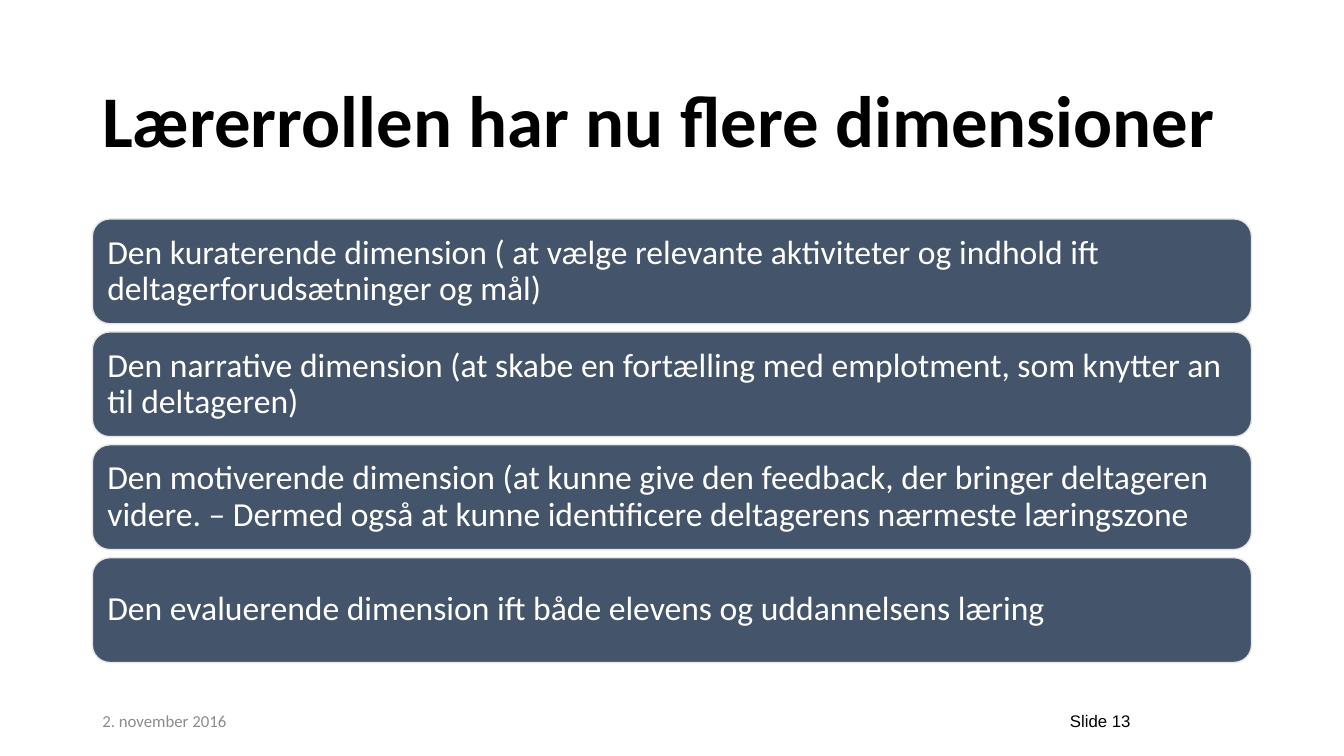
from pptx import Presentation
from pptx.dml.color import RGBColor
from pptx.enum.shapes import MSO_SHAPE
from pptx.enum.text import MSO_ANCHOR, PP_ALIGN
from pptx.util import Pt

BLACK = RGBColor(0x00, 0x00, 0x00)
WHITE = RGBColor(0xFF, 0xFF, 0xFF)
GREY = RGBColor(0x8C, 0x8C, 0x8C)
SLATE = RGBColor(0x44, 0x54, 0x6A)
PALE = RGBColor(0xE7, 0xE6, 0xE6)

LEFT, WIDTH = 66, 828
DIMENSIONS = [
    "Den kuraterende dimension ( at vælge relevante aktiviteter og indhold ift "
    "deltagerforudsætninger og mål)",
    "Den narrative dimension (at skabe en fortælling med emplotment, som knytter an "
    "til deltageren)",
    "Den motiverende dimension (at kunne give den feedback, der bringer deltageren "
    "videre. – Dermed også at kunne identificere deltagerens nærmeste læringszone",
    "Den evaluerende dimension ift både elevens og uddannelsens læring",
]


def write(frame, text, size, color, font="Calibri", bold=False,
          align=PP_ALIGN.LEFT, line_spacing=1.0):
    """Fill a text frame with one vertically centred paragraph."""
    frame.word_wrap = True
    frame.vertical_anchor = MSO_ANCHOR.MIDDLE
    paragraph = frame.paragraphs[0]
    paragraph.alignment = align
    paragraph.line_spacing = line_spacing
    run = paragraph.add_run()
    run.text = text
    run.font.name = font
    run.font.size = Pt(size)
    run.font.bold = bold
    run.font.color.rgb = color


def add_text(slide, left, top, width, height, text, size, color, **style):
    box = slide.shapes.add_textbox(Pt(left), Pt(top), Pt(width), Pt(height))
    write(box.text_frame, text, size, color, **style)


def add_title(slide, left, top, width, height):
    add_text(slide, left, top, width, height, "Lærerrollen har nu flere dimensioner",
             52, BLACK, bold=True, line_spacing=0.9)


def add_dimensions(slide, left, top, width, height, gap=5.8):
    """Stack one rounded bar per dimension in the given box."""
    count = len(DIMENSIONS)
    bar_height = (height - gap * (count - 1)) / count
    for row, dimension in enumerate(DIMENSIONS):
        bar = slide.shapes.add_shape(
            MSO_SHAPE.ROUNDED_RECTANGLE, Pt(left), Pt(top + row * (bar_height + gap)),
            Pt(width), Pt(bar_height))
        bar.shadow.inherit = False
        bar.fill.solid()
        bar.fill.fore_color.rgb = SLATE
        bar.line.color.rgb = PALE
        bar.line.width = Pt(1)
        frame = bar.text_frame
        frame.margin_left = frame.margin_right = Pt(7.2)
        frame.margin_top = frame.margin_bottom = Pt(7.2)
        write(frame, dimension, 24, WHITE, line_spacing=0.9)


def add_footer(slide, left, top, width, height, part_width=216):
    add_text(slide, left, top, part_width, height, "2. november 2016", 12, GREY)
    add_text(slide, left + width - part_width, top, part_width, height, "Slide 13",
             12, BLACK, font="Arial", align=PP_ALIGN.CENTER)


def main():
    presentation = Presentation()
    presentation.slide_width = Pt(960)
    presentation.slide_height = Pt(540)
    slide = presentation.slides.add_slide(presentation.slide_layouts[6])
    add_title(slide, LEFT, 44, WIDTH, 89)
    add_dimensions(slide, LEFT, 156.4, WIDTH, 316.8)
    add_footer(slide, LEFT, 500.5, WIDTH, 28.75)
    presentation.save("out.pptx")


if __name__ == "__main__":
    main()
